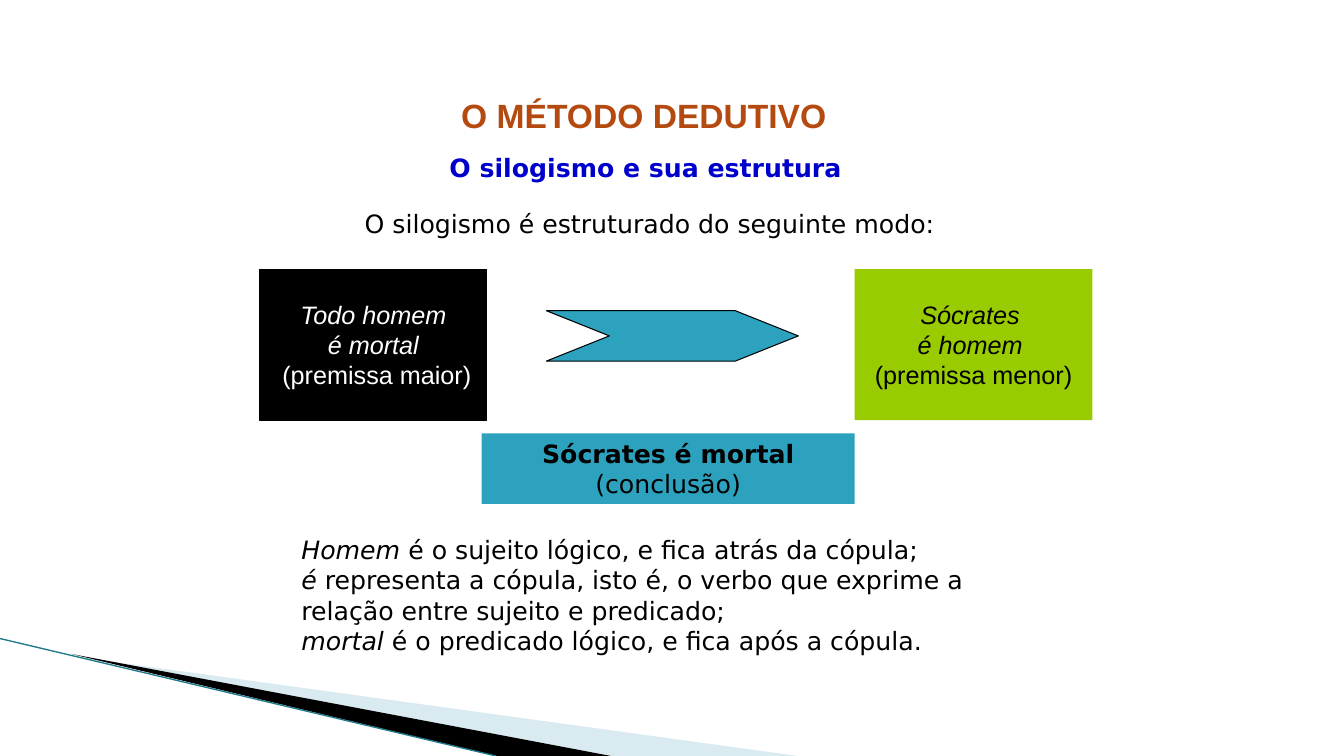
from lxml import etree
from pptx import Presentation
from pptx import util as u
from pptx.dml.color import RGBColor
from pptx.enum import shapes, text
from pptx.oxml import ns

COLORS = {"title": "B54A10", "subtitle": "0000CC", "black": "000000", "white": "FFFFFF",
          "lime": "99CC00", "teal": "2DA2BF", "pale": "A0CBDC", "edge": "1F7A8C"}
CENTER, LEFT = text.PP_ALIGN.CENTER, text.PP_ALIGN.LEFT
SANS = {"name": "DejaVu Sans", "size": u.Pt(18)}
ARIAL = {"name": "Arial", "size": u.Pt(18)}


def write(frame, paragraphs, fmt, color="black", align=CENTER, wrap=True,
          anchor=text.MSO_ANCHOR.TOP):
    """Fill a frame; each paragraph is a list of (words, run format) pairs."""
    settings = {"word_wrap": wrap, "vertical_anchor": anchor,
                "auto_size": text.MSO_AUTO_SIZE.NONE}
    for key, value in settings.items():
        setattr(frame, key, value)
    for i, runs in enumerate(paragraphs):
        paragraph = frame.add_paragraph() if i else frame.paragraphs[0]
        paragraph.alignment = align
        paragraph.space_before = u.Pt(0)
        for words, extra in runs:
            run = paragraph.add_run()
            run.text = words
            for key, value in {**fmt, **extra}.items():
                setattr(run.font, key, value)
            run.font.color.rgb = RGBColor.from_string(COLORS[color])


def paint(shape, fill, line=None):
    """Give a shape a flat fill and an optional thin outline."""
    shape.shadow.inherit = False
    shape.fill.solid()
    shape.fill.fore_color.rgb = RGBColor.from_string(COLORS[fill])
    if line:
        shape.line.color.rgb = RGBColor.from_string(COLORS[line])
        shape.line.width = u.Pt(0.75)
    else:
        shape.line.fill.background()


deck = Presentation()
deck.slide_width, deck.slide_height = u.Cm(33.87), u.Cm(19.05)
slide = deck.slides.add_slide(deck.slide_layouts[1])
title, explanation = slide.placeholders

# Corner decoration: two wedges and an edge line
wedges = [("pale", [(1.85, 16.54), (20.1, 19.05), (15.44, 19.05)]),
          ("black", [(1.8, 16.48), (15.4, 19.05), (12.5, 19.05)])]
for color, corners in wedges:
    points = [(u.Cm(x), u.Cm(y)) for x, y in corners]
    outline = slide.shapes.build_freeform(*points[0])
    outline.add_line_segments(points[1:], close=True)
    wedge = outline.convert_to_shape()
    paint(wedge, color)
    if color == "pale":
        tint = wedge.fill._xPr.find(".//" + ns.qn("a:srgbClr"))
        etree.SubElement(tint, ns.qn("a:alpha")).set("val", "40000")

edge = slide.shapes.add_connector(shapes.MSO_CONNECTOR.STRAIGHT,
                                  u.Cm(0), u.Cm(16.09), u.Cm(12.5), u.Cm(19.05))
edge.line.color.rgb = RGBColor.from_string(COLORS["edge"])
edge.line.width = u.Pt(0.95)
etree.SubElement(edge._element.spPr, ns.qn("a:effectLst"))

# Title
title.left, title.top, title.width, title.height = map(u.Cm, (10.13, 2.26, 12.19, 1.27))
write(title.text_frame, [[("O MÉTODO DEDUTIVO", {"size": u.Pt(24), "bold": True})]],
      ARIAL, "title", anchor=text.MSO_ANCHOR.MIDDLE)

# Subtitle and lead-in
headings = [
    ("O silogismo e sua estrutura", (8.33, 3.71, 15.88, 1.02), "subtitle", CENTER, True),
    ("O silogismo é estruturado do seguinte modo:", (8.94, 5.13, 15.6, 1.02), "black", LEFT, False),
]
for words, place, color, align, bold in headings:
    heading = slide.shapes.add_textbox(*map(u.Cm, place))
    write(heading.text_frame, [[(words, {"bold": bold})]], SANS, color, align)

# Premises
premises = [
    (6.55, 5.72, "black", "black", "white", ["Todo homem", "é mortal", " (premissa maior)"]),
    (21.54, 5.99, "lime", None, "black", ["Sócrates ", "é homem ", "(premissa menor)"]),
]
for left, width, fill, line, color, lines in premises:
    premise = slide.shapes.add_shape(shapes.MSO_SHAPE.RECTANGLE, u.Cm(left), u.Cm(6.78),
                                     u.Cm(width), u.Cm(3.81))
    paint(premise, fill, line)
    write(premise.text_frame, [[(words, {"italic": i < 2})] for i, words in enumerate(lines)],
          ARIAL, color, wrap=False, anchor=text.MSO_ANCHOR.MIDDLE)

# Arrow between the premises
step = slide.shapes.add_shape(shapes.MSO_SHAPE.CHEVRON, u.Cm(13.77), u.Cm(7.83),
                              u.Cm(6.35), u.Cm(1.27))
step.adjustments[0] = 1.25
paint(step, "teal", "black")

# Conclusion
conclusion = slide.shapes.add_shape(shapes.MSO_SHAPE.RECTANGLE, u.Cm(12.14), u.Cm(10.92),
                                    u.Cm(9.4), u.Cm(1.78))
paint(conclusion, "teal")
write(conclusion.text_frame, [[("Sócrates é mortal", {"bold": True}), (" (conclusão)", {})]], SANS)

# Explanation of the terms
explanation.left, explanation.top, explanation.width, explanation.height = map(
    u.Cm, (7.34, 13.34, 19.6, 3.3))
terms = [("Homem", " é o sujeito lógico, e fica atrás da cópula;"),
         ("é", " representa a cópula, isto é, o verbo que exprime a relação entre sujeito e predicado;"),
         ("mortal", " é o predicado lógico, e fica após a cópula.")]
write(explanation.text_frame, [[(term, {"italic": True}), (role, {})] for term, role in terms],
      SANS, align=LEFT)
for paragraph in explanation.text_frame.paragraphs:
    properties = paragraph._p.get_or_add_pPr()
    properties.set("marL", "0")
    properties.set("indent", "0")
    etree.SubElement(properties, ns.qn("a:buNone"))

deck.save("out.pptx")
